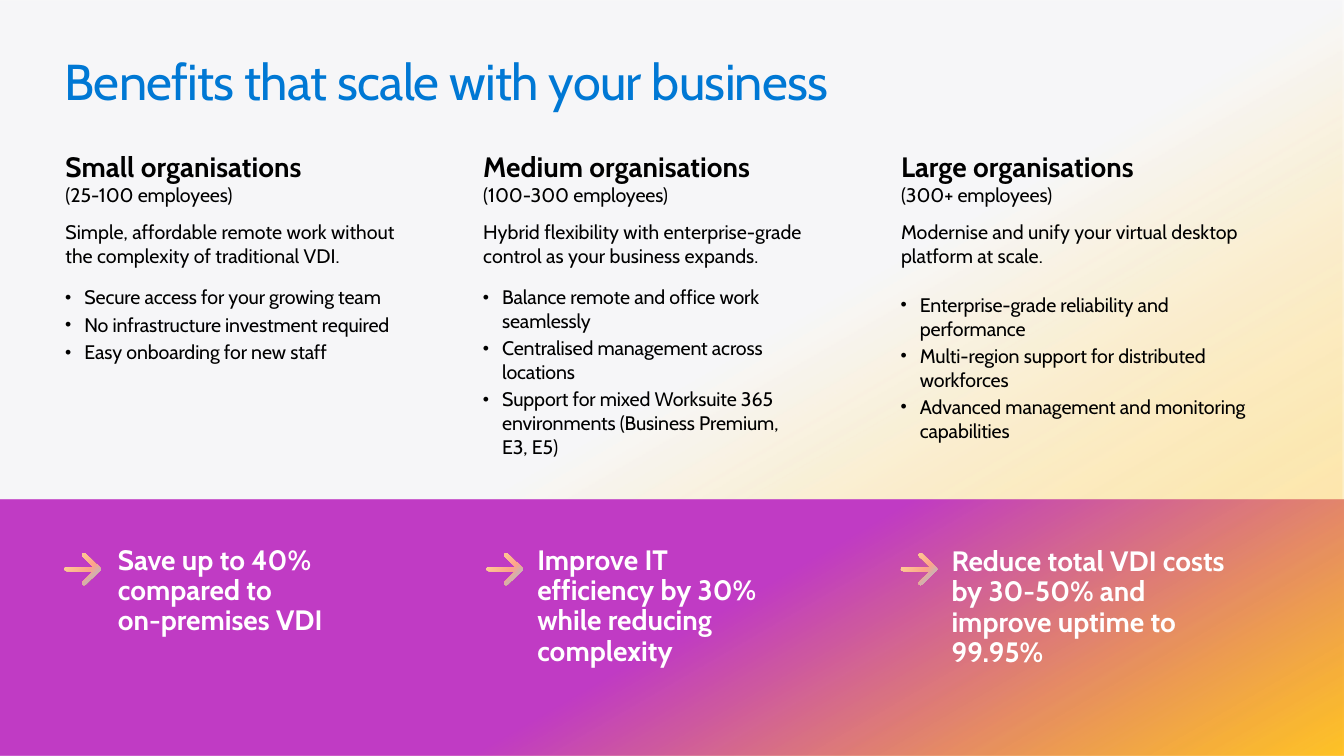
"""Build the slide on benefits for small, medium and large organisations."""
import pptx
import pptx.dml.color
import pptx.enum.shapes
import pptx.enum.text
import pptx.oxml
import pptx.oxml.ns
import pptx.util

Pt = pptx.util.Pt
RGBColor = pptx.dml.color.RGBColor
qn = pptx.oxml.ns.qn

BLUE = RGBColor(0x00, 0x78, 0xD4)
BLACK = RGBColor(0x00, 0x00, 0x00)
WHITE = RGBColor(0xFF, 0xFF, 0xFF)
MIST = RGBColor(0xF4, 0xF3, 0xF5)
AMBER = RGBColor(0xFF, 0xB9, 0x00)
PURPLE = RGBColor(0xC0, 0x3B, 0xC4)
SKY = RGBColor(0x8D, 0xC8, 0xE8)
PEACH = RGBColor(0xFF, 0xA3, 0x8B)
CREAM = RGBColor(0xFF, 0xE3, 0x99)

LINEAR = '<a:lin ang="3600000" scaled="0"/>'
RADIAL = '<a:path path="circle"><a:fillToRect l="100000" t="100000"/></a:path>'


def paint_gradient(shape, stops, direction):
    shape.shadow.inherit = False
    shape.line.fill.background()
    shape.fill.background()
    stop_xml = "".join(
        f'<a:gs pos="{position * 1000}"><a:srgbClr val="{color}">'
        f'<a:alpha val="{opacity * 1000}"/></a:srgbClr></a:gs>'
        for position, color, opacity in stops)
    gradient = pptx.oxml.parse_xml(
        f'<a:gradFill {pptx.oxml.ns.nsdecls("a")} rotWithShape="1">'
        f'<a:gsLst>{stop_xml}</a:gsLst>{direction}</a:gradFill>')
    properties = shape._element.spPr
    properties.replace(properties.find(qn("a:noFill")), gradient)


def add_text(left, top, width, height, paragraphs):
    box = slide.shapes.add_textbox(Pt(left), Pt(top), Pt(width), Pt(height))
    frame = box.text_frame
    frame.margin_left = frame.margin_top = frame.margin_right = frame.margin_bottom = 0
    frame.word_wrap = True
    frame.auto_size = pptx.enum.text.MSO_AUTO_SIZE.SHAPE_TO_FIT_TEXT
    frame.text = "\n".join(text for text, *style in paragraphs)
    for para, (text, size, color, bold, spacing) in zip(frame.paragraphs, paragraphs):
        for span in para.runs:
            span.font.name = "Cabin"
            span.font.size = Pt(size)
            span.font.color.rgb = color
            span.font.bold = bold
            span._r.get_or_add_rPr().set("spc", str(spacing))
        for line_break in para._p.findall(qn("a:br")):
            break_format = line_break.makeelement(qn("a:rPr"), {"sz": str(size * 100)})
            line_break.append(break_format)
    return frame


deck = pptx.Presentation()
deck.slide_width = Pt(960)
deck.slide_height = Pt(540)
page = deck.slide_layouts[6]
slide = deck.slides.add_slide(page)

for top, height, stops in [
    (0, 540, [(51, MIST, 68), (100, AMBER, 37)]),
    (357, 183, [(51, PURPLE, 100), (100, AMBER, 76)]),
]:
    panel = slide.shapes.add_shape(
        pptx.enum.shapes.MSO_SHAPE.RECTANGLE, 0, Pt(top), Pt(960), Pt(height))
    paint_gradient(panel, stops, LINEAR)

add_text(46.1, 36, 867.6, 43.9,
         [("Benefits that scale with your business", 36, BLUE, False, -50)])

organisations = [
    (247, 155.5, "Small organisations", "(25-100 employees)",
     "Simple, affordable remote work without the complexity of traditional VDI.",
     ["Secure access for your growing team",
      "No infrastructure investment required",
      "Easy onboarding for new staff"], 2.8),
    (252, 223.2, "Medium organisations", "(100-300 employees)",
     "Hybrid flexibility with enterprise-grade control as your business expands.",
     ["Balance remote and office work seamlessly",
      "Centralised management across locations",
      "Support for mixed Worksuite 365 environments (Business Premium,\vE3, E5)"], 2.8),
    (247, 211, "Large organisations", "(300+ employees)",
     "Modernise and unify your virtual desktop platform at scale.",
     ["Enterprise-grade reliability and performance",
      "Multi-region support for distributed workforces",
      "Advanced management and monitoring capabilities"], 8.2),
]
for column, (width, height, name, staff, summary, benefits, gap) in enumerate(organisations):
    frame = add_text(
        46.1 + 298.4 * column, 106.6, width, height,
        [(f"{name}\v{staff}", 20, BLACK, False, -10), (summary, 14, BLACK, False, 0)]
        + [(benefit, 14, BLACK, False, -10) for benefit in benefits])
    heading, overview, *bullets = frame.paragraphs
    title_span, staff_span = heading.runs
    title_span.font.bold = True
    title_span._r.get_or_add_rPr().set("spc", "0")
    staff_span.font.size = Pt(14)
    overview.space_before = overview.space_after = Pt(10)
    for para in (heading, overview):
        para._p.get_or_add_pPr().set("marL", str(Pt(0.7)))
    for para in bullets:
        para.space_before = Pt(2.8)
        settings = para._p.get_or_add_pPr()
        settings.set("marL", str(Pt(14.2)))
        settings.set("indent", str(Pt(-13.7)))
        for tag, attributes in [("a:buSzPct", {"val": "90000"}),
                                ("a:buFont", {"typeface": "Arial"}),
                                ("a:buChar", {"char": "•"})]:
            settings.append(settings.makeelement(qn(tag), attributes))
    bullets[0].space_before = Pt(gap)

outcomes = [
    (46, 84.2, 390.2, 172, 65.5, "Save up to 40% compared to\von-premises VDI"),
    (347.5, 383.8, 390.2, 169, 87.1,
     "Improve IT efficiency by 30% while reducing complexity"),
    (643.5, 679.7, 391, 197.3, 87.1,
     "Reduce total VDI costs by 30-50% and improve uptime to 99.95%"),
]
upper_edge = [(0, 115), (4, 105), (14, 101), (209, 101), (131, 25), (126, 15),
              (130, 5), (140, 0), (151, 5), (255, 105), (260, 115)]
lower_edge = [(x, 230 - y) for x, y in reversed(upper_edge[1:-1])]
for arrow_left, text_left, top, width, height, text in outcomes:
    frame = add_text(text_left, top, width, height, [(text, 20, WHITE, True, 0)])
    frame.paragraphs[0].line_spacing = 0.9
    builder = slide.shapes.build_freeform(*upper_edge[0], scale=Pt(0.1))
    builder.add_line_segments(upper_edge[1:] + lower_edge, close=True)
    arrow = builder.convert_to_shape(Pt(arrow_left), Pt(395))
    paint_gradient(arrow, [(0, SKY, 100), (40, PEACH, 100), (99, CREAM, 100)], RADIAL)

deck.save("out.pptx")
